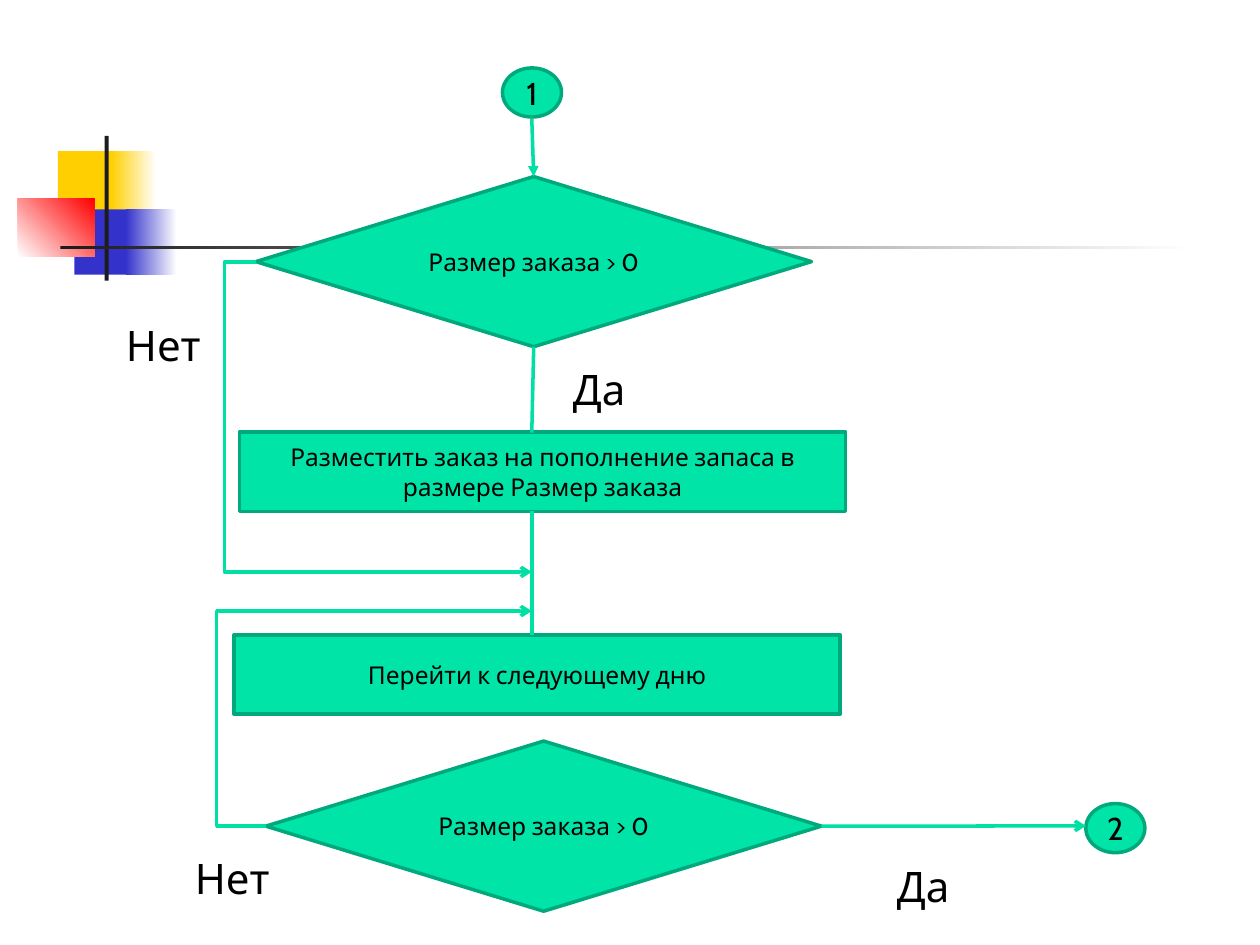
from typing import NamedTuple, Optional

from lxml import etree
from pptx import Presentation
from pptx.dml.color import RGBColor
from pptx.enum.shapes import MSO_CONNECTOR as CXN, MSO_SHAPE as SHAPE
from pptx.enum.text import MSO_ANCHOR, MSO_AUTO_SIZE, PP_ALIGN
from pptx.oxml.ns import qn
from pptx.util import Cm, Pt

YELLOW = RGBColor(0xFF, 0xCF, 0x01)
BLUE = RGBColor(0x33, 0x33, 0xCC)
RED = RGBColor(0xFF, 0x00, 0x00)
DARK = RGBColor(0x1C, 0x1C, 0x1C)
WHITE = RGBColor(0xFF, 0xFF, 0xFF)
BLACK = RGBColor(0x00, 0x00, 0x00)
GREEN = RGBColor(0x00, 0xE4, 0xA8)
GREEN_EDGE = RGBColor(0x00, 0xA9, 0x7C)
GREEN_LINE = RGBColor(0x00, 0xDF, 0xA4)
FONT = "Cabin"


class Bar(NamedTuple):
    box: tuple
    start: RGBColor
    end: Optional[RGBColor] = None
    angle: int = 0


class Node(NamedTuple):
    name: str
    kind: SHAPE
    left: float
    top: float
    text: str


class Label(NamedTuple):
    left: float
    top: float
    text: str


class Link(NamedTuple):
    start: tuple
    end: tuple
    arrow: Optional[str] = None
    bend: Optional[float] = None
    begin_at: Optional[tuple] = None
    end_at: Optional[tuple] = None


# Lengths are in centimetres
BARS = [
    Bar((1.17, 3.05, 1.22, 1.32), YELLOW),
    Bar((2.24, 3.05, 0.91, 1.32), YELLOW, WHITE),
    Bar((1.5, 4.22, 1.17, 1.32), BLUE),
    Bar((2.54, 4.22, 1.02, 1.32), BLUE, WHITE),
    Bar((0.36, 4.01, 1.55, 1.17), WHITE, RED, 45),
    Bar((2.11, 2.74, 0.08, 2.92), DARK),
    Bar((1.22, 4.95, 22.86, 0.08), DARK, WHITE),
]

# Width, height and text size of each kind of node
FORMATS = {
    SHAPE.FLOWCHART_DECISION: (11.2, 3.43, 14),
    SHAPE.RECTANGLE: (12.22, 1.6, 14),
    SHAPE.OVAL: (1.19, 0.99, 18),
}

NODES = [
    Node("check", SHAPE.FLOWCHART_DECISION, 5.16, 3.56, "Размер заказа > 0"),
    Node("order", SHAPE.RECTANGLE, 4.83, 8.71,
         "Разместить заказ на пополнение запаса в размере Размер заказа"),
    Node("entry", SHAPE.OVAL, 10.13, 1.37, "1"),
    Node("next_day", SHAPE.RECTANGLE, 4.72, 12.8, "Перейти к следующему дню"),
    Node("recheck", SHAPE.FLOWCHART_DECISION, 5.36, 14.94, "Размер заказа > 0"),
    Node("exit", SHAPE.OVAL, 21.89, 16.2, "2"),
]

LABELS = [
    Label(11.3, 7.21, "Да"),
    Label(2.29, 6.32, "Нет"),
    Label(3.68, 17.07, "Нет"),
    Label(17.83, 17.22, "Да"),
]

AXIS = 10.72
LINKS = [
    Link((AXIS, 2.39), (AXIS, 3.56), "triangle", end_at=("check", 0)),
    Link((AXIS, 6.99), (AXIS, 8.72), begin_at=("check", 2)),
    Link((AXIS, 10.31), (AXIS, 12.8)),
    Link((5.16, 5.28), (AXIS, 11.53), "arrow", bend=-0.114),
    Link((5.36, 16.65), (AXIS, 12.32), "arrow", bend=-0.185),
    Link((16.56, 16.65), (21.89, 16.65), "arrow", begin_at=("recheck", 3)),
]


def write(tf, text: str, size: int, align=PP_ALIGN.LEFT) -> None:
    tf.word_wrap = True
    p = tf.paragraphs[0]
    p.alignment = align
    r = p.add_run()
    r.text = text
    for key, value in {"name": FONT, "size": Pt(size)}.items():
        setattr(r.font, key, value)
    r.font.color.rgb = BLACK


def draw_bar(s, bar: Bar) -> None:
    sp = s.shapes.add_shape(SHAPE.RECTANGLE, *map(Cm, bar.box))
    sp.shadow.inherit = False
    sp.line.fill.background()
    if bar.end is None:
        sp.fill.solid()
        sp.fill.fore_color.rgb = bar.start
        return
    sp.fill.gradient()
    sp.fill.gradient_angle = bar.angle
    for stop, color in zip(sp.fill.gradient_stops, (bar.start, bar.end)):
        stop.color.rgb = color


def draw_node(s, node: Node):
    width, height, size = FORMATS[node.kind]
    sp = s.shapes.add_shape(node.kind, *map(Cm, (node.left, node.top, width, height)))
    sp.shadow.inherit = False
    sp.fill.solid()
    sp.fill.fore_color.rgb = GREEN
    sp.line.color.rgb = GREEN_EDGE
    sp.line.width = Pt(2)
    sp.text_frame.vertical_anchor = MSO_ANCHOR.MIDDLE
    write(sp.text_frame, node.text, size, PP_ALIGN.CENTER)
    return sp


def draw_label(s, label: Label) -> None:
    tf = s.shapes.add_textbox(*map(Cm, (label.left, label.top, 2.79, 1.27))).text_frame
    write(tf, label.text, 24)
    tf.auto_size = MSO_AUTO_SIZE.SHAPE_TO_FIT_TEXT


def draw_link(s, link: Link, shapes: dict) -> None:
    kind = CXN.STRAIGHT if link.bend is None else CXN.ELBOW
    cxn = s.shapes.add_connector(kind, *map(Cm, link.start + link.end))
    if link.begin_at:
        name, site = link.begin_at
        cxn.begin_connect(shapes[name], site)
    if link.end_at:
        name, site = link.end_at
        cxn.end_connect(shapes[name], site)
    cxn.line.color.rgb = GREEN_LINE
    cxn.line.width = Pt(2)
    sp_pr = cxn._element.spPr
    if link.arrow:
        etree.SubElement(sp_pr.find(qn("a:ln")), qn("a:tailEnd"), type=link.arrow)
    if link.bend is not None:
        guides = sp_pr.find(qn("a:prstGeom")).find(qn("a:avLst"))
        etree.SubElement(guides, qn("a:gd"), name="adj1",
                         fmla=f"val {round(link.bend * 100000)}")
    etree.SubElement(sp_pr, qn("a:effectLst"))


def main() -> None:
    prs = Presentation()
    prs.slide_width, prs.slide_height = Cm(25.4), Cm(19.05)
    s = prs.slides.add_slide(prs.slide_layouts[6])

    # Corner decoration
    for bar in BARS:
        draw_bar(s, bar)

    # Flowchart
    shapes = {node.name: draw_node(s, node) for node in NODES}
    for link in LINKS:
        draw_link(s, link, shapes)
    for label in LABELS:
        draw_label(s, label)

    prs.save("out.pptx")


if __name__ == "__main__":
    main()
